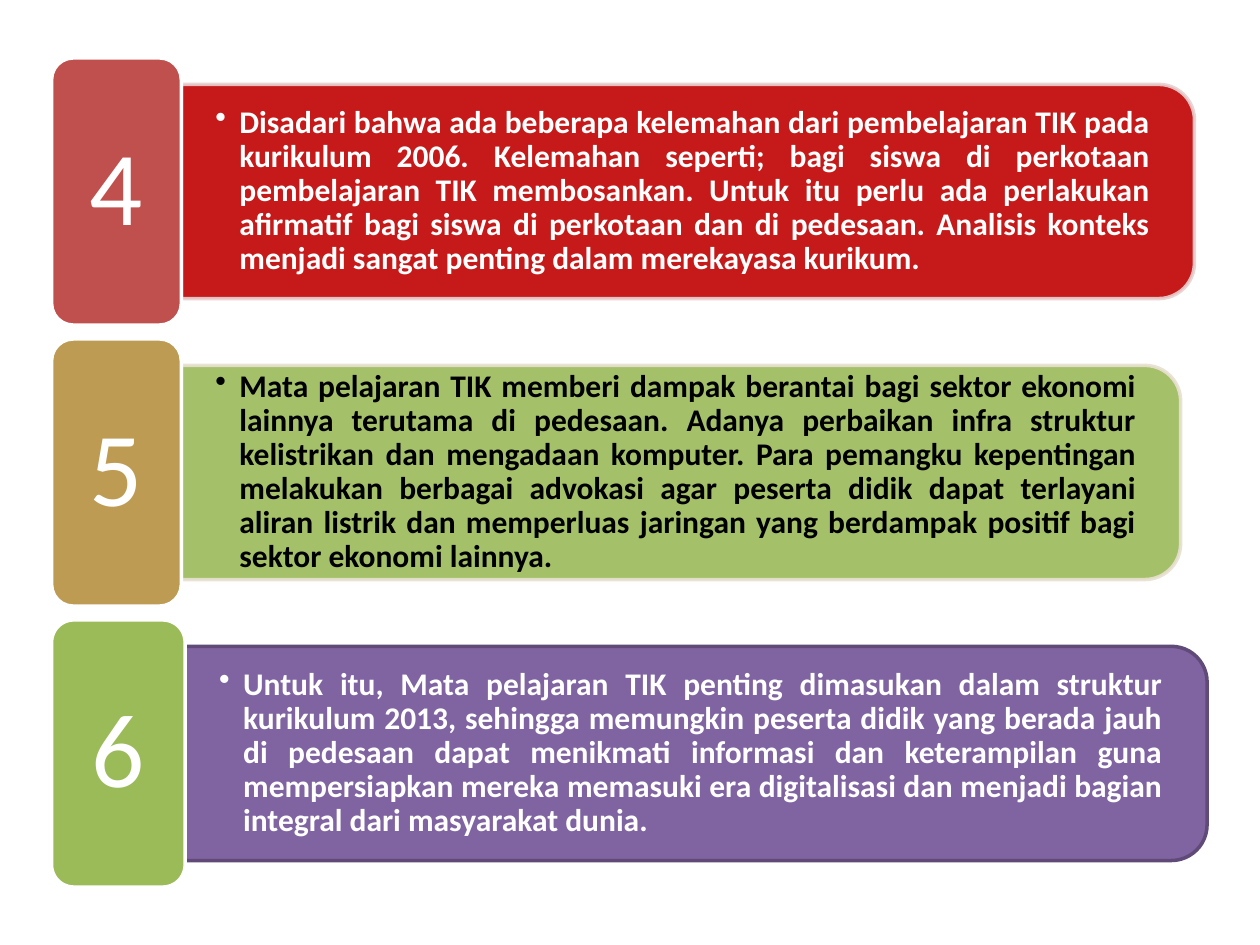
"""Build a slide of three numbered points about ICT lessons in the curriculum."""
import lxml.etree
import pptx
import pptx.dml.color
import pptx.enum.shapes
import pptx.enum.text
import pptx.oxml.ns
import pptx.util

Inches = pptx.util.Inches
Pt = pptx.util.Pt
Shape = pptx.enum.shapes.MSO_SHAPE
Align = pptx.enum.text.PP_ALIGN
qn = pptx.oxml.ns.qn


class Theme:
    font = "Calibri"
    body = 18
    digit = 60
    edge = 2
    white = "FFFFFF"
    black = "000000"
    red = "C00000"
    rose = "C0504D"
    blush = "E8D0D0"
    green = "9BBB59"
    gold = "BD9B53"
    cream = "E8E1D1"
    purple = "8064A2"
    plum = "5F4A78"


def paint(shape, fill, line, alpha=100):
    shape.shadow.inherit = False
    shape.line.width = Pt(Theme.edge)
    for part, color in ((shape.fill, fill), (shape.line.fill, line)):
        part.solid()
        part.fore_color.rgb = pptx.dml.color.RGBColor.from_string(color)
    if alpha < 100:
        for color in shape.element.spPr.iter(qn("a:srgbClr")):
            lxml.etree.SubElement(color, qn("a:alpha"), val=str(alpha * 1000))


def write(shape, words, size, color, bold=False, align=Align.CENTER, side=0.1, bullet=False):
    frame = shape.text_frame
    frame.word_wrap = True
    frame.auto_size = pptx.enum.text.MSO_AUTO_SIZE.NONE
    frame.vertical_anchor = pptx.enum.text.MSO_ANCHOR.MIDDLE
    frame.margin_left = frame.margin_right = Inches(side)
    frame.margin_top = frame.margin_bottom = Inches(0.14)
    para = frame.paragraphs[0]
    para.alignment = align
    para.line_spacing = 0.9
    if bullet:
        para.level = 1
        props = para._p.get_or_add_pPr()
        props.set("marL", str(Inches(0.19)))
        props.set("indent", str(-Inches(0.19)))
        lxml.etree.SubElement(props, qn("a:buChar"), char="•")
    run = para.add_run()
    run.text = words
    run.font.name = Theme.font
    run.font.size = Pt(size)
    run.font.bold = bold
    run.font.color.rgb = pptx.dml.color.RGBColor.from_string(color)


deck = pptx.Presentation()
deck.slide_width = Inches(10)
deck.slide_height = Inches(7.5)
slide = deck.slides.add_slide(deck.slide_layouts[6])

points = [
    ("4", 1.03, 8.04, Theme.rose, Theme.red, Theme.blush, 90, Theme.white,
     "Disadari bahwa ada beberapa kelemahan dari pembelajaran TIK pada kurikulum 2006. "
     "Kelemahan seperti; bagi siswa di perkotaan pembelajaran TIK membosankan. Untuk itu "
     "perlu ada perlakukan afirmatif bagi siswa di perkotaan dan di pedesaan. Analisis "
     "konteks menjadi sangat penting dalam merekayasa kurikum."),
    ("5", 1.03, 7.93, Theme.gold, Theme.green, Theme.cream, 90, Theme.black,
     "Mata pelajaran TIK memberi dampak berantai bagi sektor ekonomi lainnya terutama di "
     "pedesaan. Adanya perbaikan infra struktur kelistrikan dan mengadaan komputer. Para "
     "pemangku kepentingan melakukan berbagai advokasi agar peserta didik dapat terlayani "
     "aliran listrik dan memperluas jaringan yang berdampak positif bagi sektor ekonomi "
     "lainnya."),
    ("6", 1.06, 8.11, Theme.green, Theme.purple, Theme.plum, 100, Theme.white,
     "Untuk itu, Mata pelajaran TIK penting dimasukan dalam struktur kurikulum 2013, "
     "sehingga memungkin peserta didik yang berada jauh di pedesaan dapat menikmati "
     "informasi dan keterampilan guna mempersiapkan mereka memasuki era digitalisasi dan "
     "menjadi bagian integral dari masyarakat dunia."),
]

left, top, pitch = 0.41, 0.46, 2.23
tall, band, inner = 2.12, 1.7, 1.53

for row, (digit, wide, long, tab, fill, line, alpha, ink, words) in enumerate(points):
    start = left + wide
    high = top + row * pitch
    mid = high + tall / 2

    panel = slide.shapes.add_shape(
        Shape.ROUND_2_SAME_RECTANGLE,
        Inches(start + (long - band) / 2), Inches(mid - long / 2),
        Inches(band), Inches(long))
    panel.rotation = 90
    paint(panel, fill, line, alpha)

    box = slide.shapes.add_textbox(
        Inches(start), Inches(mid - inner / 2), Inches(long - 0.08), Inches(inner))
    write(box, words, Theme.body, ink, bold=True, align=Align.JUSTIFY, side=0.27, bullet=True)

    badge = slide.shapes.add_shape(
        Shape.ROUNDED_RECTANGLE, Inches(left), Inches(high), Inches(wide), Inches(tall))
    paint(badge, tab, Theme.white)
    write(badge, digit, Theme.digit, Theme.white)

deck.save("out.pptx")
